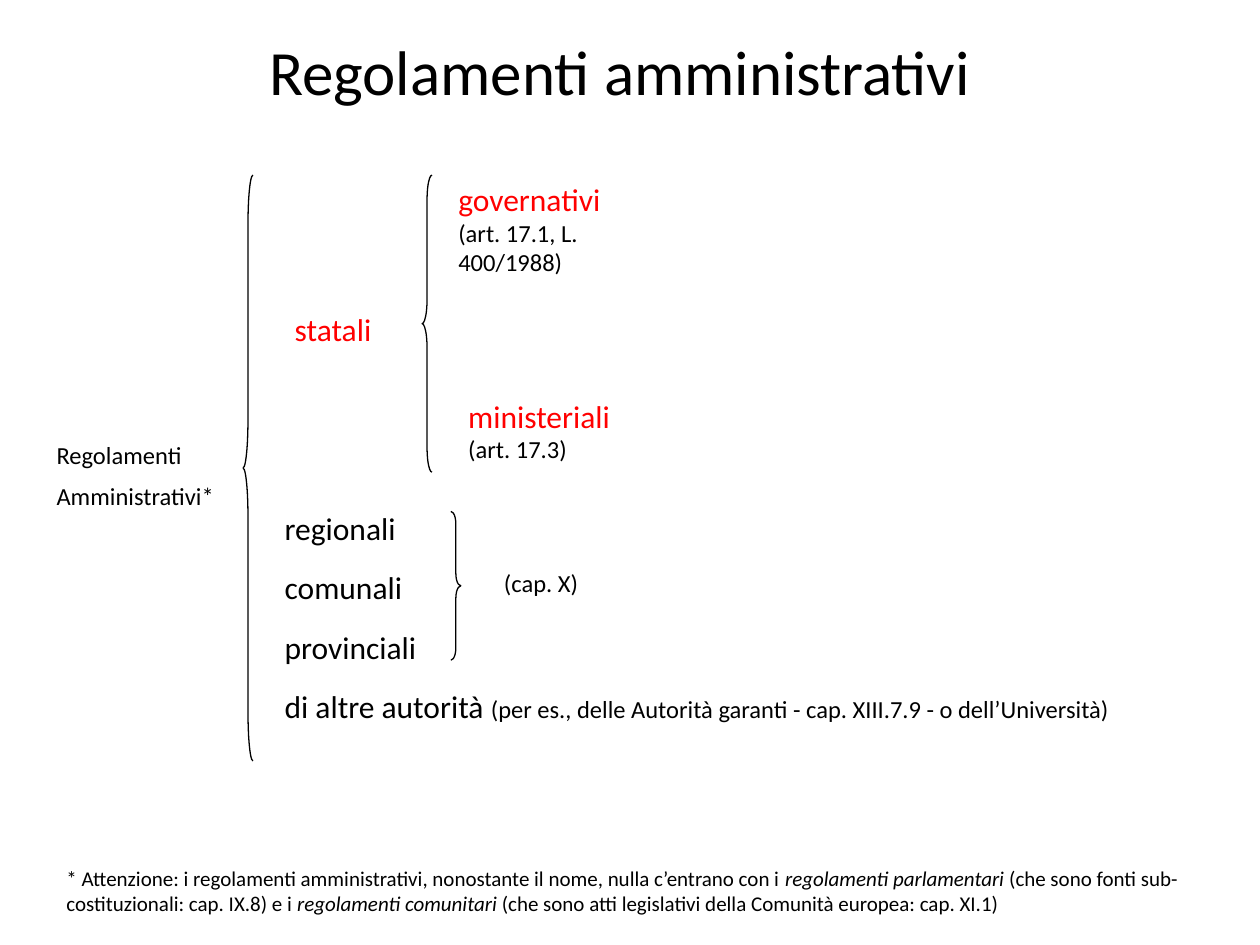
"""Build a slide that classifies administrative regulations with braces."""
import pptx
import pptx.dml.color
import pptx.enum.shapes
import pptx.enum.text
import pptx.util

Cm, Pt = pptx.util.Cm, pptx.util.Pt
BRACE = pptx.enum.shapes.MSO_SHAPE
BLACK, RED = "000000", "FF0000"


def color(value):
    return pptx.dml.color.RGBColor.from_string(value)


def add_text(box, *paragraphs):
    frame = slide.shapes.add_textbox(*map(Cm, box)).text_frame
    frame.word_wrap = True
    for index, runs in enumerate(paragraphs):
        paragraph = frame.add_paragraph() if index else frame.paragraphs[0]
        if index:
            paragraph.space_before = Pt(runs[0][1] / 2)
        for text, size, hue, italic in runs:
            run = paragraph.add_run()
            run.text = text
            run.font.name = "Calibri"
            run.font.size = Pt(size)
            run.font.italic = italic
            run.font.color.rgb = color(hue)
    return frame


presentation = pptx.Presentation()
presentation.slide_width, presentation.slide_height = Cm(25.4), Cm(19.05)
slide = presentation.slides.add_slide(presentation.slide_layouts[6])

title = add_text((1.7, 0.71, 21.59, 1.4), [("Regolamenti amministrativi", 36, BLACK, False)])
title.vertical_anchor = pptx.enum.text.MSO_ANCHOR.MIDDLE
title.paragraphs[0].alignment = pptx.enum.text.PP_ALIGN.CENTER

for kind, left, top, height, curve in (
    (BRACE.LEFT_BRACE, 4.9, 3.53, 11.81, 4.96),
    (BRACE.LEFT_BRACE, 8.51, 3.53, 5.99, 2.47),
    (BRACE.RIGHT_BRACE, 9.09, 10.31, 3, 1.26),
):
    brace = slide.shapes.add_shape(kind, Cm(left), Cm(top), Cm(0.2), Cm(height))
    brace.adjustments[0] = curve
    brace.shadow.inherit = False
    brace.fill.background()
    brace.line.color.rgb = color(BLACK)
    brace.line.width = Pt(0.75)

add_text(
    (0.89, 8.74, 3.99, 1.73),
    [("Regolamenti", 14, BLACK, False)],
    [("Amministrativi*", 14, BLACK, False)],
)
add_text((5.69, 6.12, 2.59, 1.02), [("statali", 18, RED, False)])

for box, source, article in (
    ((8.99, 3.51, 3.81, 3.35), "governativi ", "(art. 17.1, L. 400/1988)"),
    ((9.19, 7.87, 3.61, 1.6), "ministeriali ", "(art. 17.3)"),
):
    add_text(box, [(source, 18, RED, False), (article, 14, BLACK, False)])

other_examples = "(per es., delle Autorità garanti - cap. XIII.7.9 - o dell’Università)"
for row, (width, authority, examples) in enumerate((
    (3.2, "regionali", ""),
    (3.2, "comunali", ""),
    (3.4, "provinciali", ""),
    (19, "di altre autorità ", other_examples),
)):
    runs = [(authority, 18, BLACK, False)]
    if examples:
        runs.append((examples, 14, BLACK, False))
    add_text((5.49, 10.13 + 1.2 * row, width, 1.02), runs)

add_text((9.91, 11.33, 9.6, 0.84), [("(cap. X)", 14, BLACK, False)])

add_text((1.09, 17.32, 23.22, 1.27), [
    ("* Attenzione: i regolamenti amministrativi, nonostante il nome, nulla c’entrano con i ",
     12, BLACK, False),
    ("regolamenti parlamentari", 12, BLACK, True),
    (" (che sono fonti sub-costituzionali: cap. IX.8) e i ", 12, BLACK, False),
    ("regolamenti comunitari", 12, BLACK, True),
    (" (che sono atti legislativi della Comunità europea: cap. XI.1)", 12, BLACK, False),
])

presentation.save("out.pptx")
